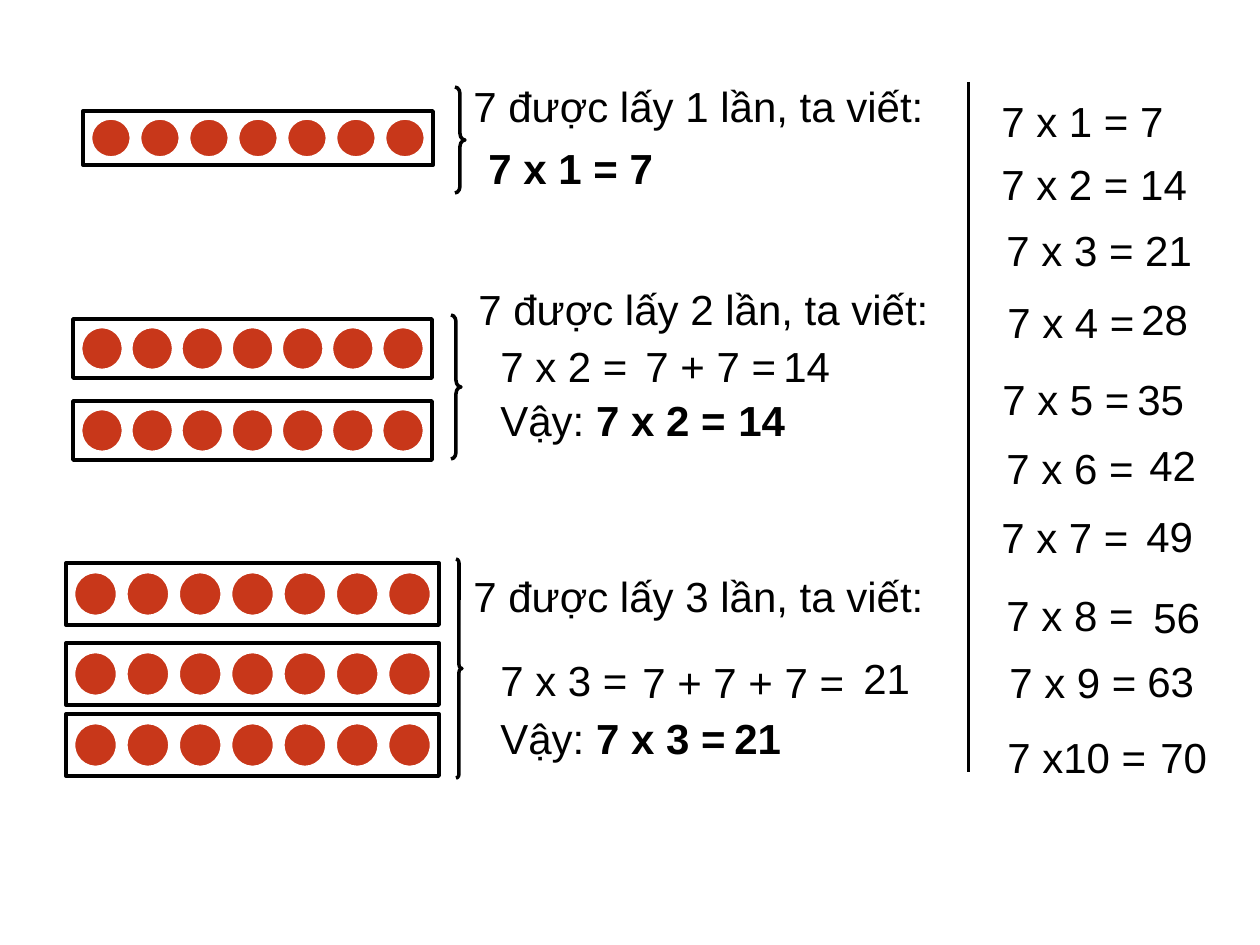
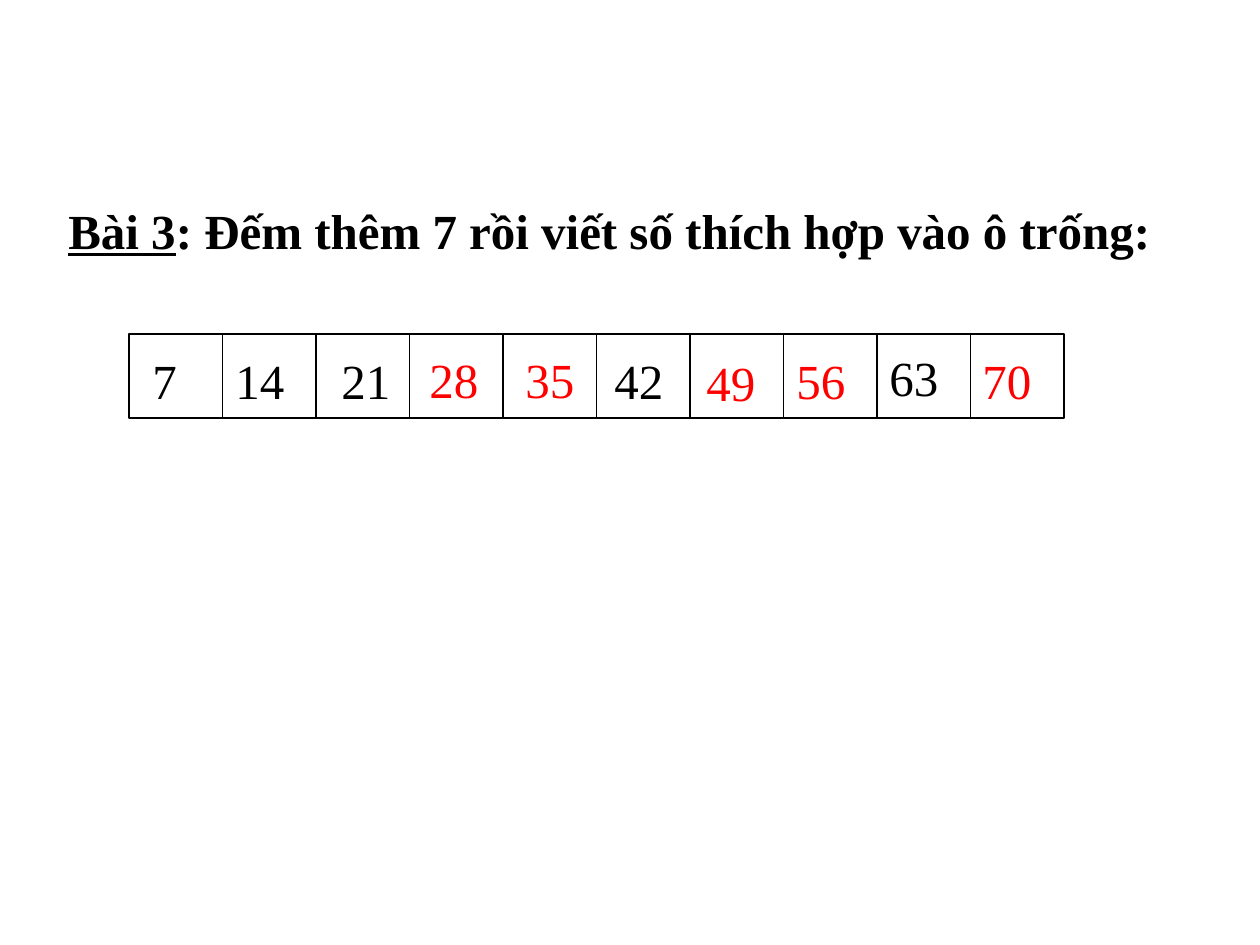
"""Build two slides on the multiplication table of seven."""
from dataclasses import dataclass

from lxml.etree import SubElement
from pptx import Presentation
from pptx.dml.color import RGBColor
from pptx.enum.shapes import MSO_CONNECTOR as Link, MSO_SHAPE as Shape
from pptx.oxml.ns import qn
from pptx.util import Emu, Pt


@dataclass(frozen=True)
class Theme:
    ink: str = "000000"
    paper: str = "FFFFFF"
    dot: str = "C8371A"
    answer: str = "FF0000"
    sans: str = "Arial"
    serif: str = "Times New Roman"
    sum_size: int = 24
    task_size: int = 28


THEME = Theme()
PX = 914400 / 126
SLIDE_SIZE = (1260, 945)
SUM_HEIGHT, TASK_HEIGHT = 63, 72
DOTS_PER_TRAY, TRAY_MARGIN = 7, 8

TRAY_GROUPS = [
    dict(left=83, tops=[111], size=(350, 54), dot=(40, 39), brace=(455, 87, 10, 106)),
    dict(left=73, tops=[319, 401], size=(359, 59), dot=(42, 43), brace=(451, 315, 10, 144)),
    dict(left=66, tops=[563, 643, 714], size=(373, 62), dot=(43, 44), brace=(456, 559, 6, 219)),
]
STATEMENTS = [
    ("7 được lấy 1 lần, ta viết:", 461, 74, 508),
    ("7 được lấy 2 lần, ta viết:", 466, 277, 508),
    ("7 được lấy 3 lần, ta viết:", 461, 564, 485),
]
WORKINGS = [
    ([("7 x 1 = 7", True)], 476, 136, 192),
    ([("7 x 2 =", False)], 488, 334, 154),
    ([("7 + 7 =", False)], 633, 334, 158),
    ([("14", False)], 771, 334, 73),
    ([("Vậy: ", False), ("7 x 2 =", True)], 488, 388, 251),
    ([("14", True)], 726, 388, 73),
    ([("7 x 3 =", False)], 488, 648, 154),
    ([("7 + 7 + 7 =", False)], 630, 650, 229),
    ([("21", False)], 851, 646, 73),
    ([("Vậy: ", False), ("7 x 3 =", True)], 488, 706, 253),
    ([("21", True)], 722, 706, 73),
]
TIMES_TABLE = [
    ("7 x 1 = 7", 989, 89, 189),
    ("7 x 2 = 14", 989, 152, 213),
    ("7 x 3 = 21", 994, 218, 213),
    ("7 x 4 =", 995, 290, 154), ("28", 1129, 287, 73),
    ("7 x 5 =", 990, 367, 154), ("35", 1125, 367, 73),
    ("7 x 6 =", 994, 436, 154), ("42", 1137, 433, 73),
    ("7 x 7 =", 989, 505, 154), ("49", 1134, 504, 73),
    ("7 x 8 =", 994, 583, 154), ("56", 1141, 585, 73),
    ("7 x 9 =", 997, 650, 154), ("63", 1135, 649, 73),
    ("7 x10 =", 995, 725, 166), ("70", 1148, 725, 73),
]
DIVIDER = (969, 82, 969, 772)

TASK = [("Bài 3", True), (": Đếm thêm 7 rồi viết số thích hợp vào ô trống:", False)]
COUNT_STRIP = dict(left=129, top=334, width=935, height=84)
COUNTS = [
    ("7", 140, 344, THEME.ink), ("14", 223, 344, THEME.ink),
    ("21", 329, 344, THEME.ink), ("28", 417, 343, THEME.answer),
    ("35", 513, 343, THEME.answer), ("42", 602, 344, THEME.ink),
    ("49", 694, 346, THEME.answer), ("56", 784, 344, THEME.answer),
    ("63", 877, 341, THEME.ink), ("70", 970, 344, THEME.answer),
]


def px(*lengths):
    return [Emu(round(length * PX)) for length in lengths]


def rgb(colour):
    return RGBColor.from_string(colour)


def write(slide, runs, box, font=THEME.sans, size=THEME.sum_size, colour=THEME.ink,
          wrap=False, underline_first=False):
    frame = slide.shapes.add_textbox(*px(*box)).text_frame
    frame.word_wrap = wrap
    paragraph = frame.paragraphs[0]
    for index, (text, bold) in enumerate(runs):
        run = paragraph.add_run()
        run.text = text
        run.font.name, run.font.size, run.font.bold = font, Pt(size), bold
        run.font.color.rgb = rgb(colour)
        if underline_first and index == 0:
            run.font.underline = True


def draw(shapes, kind, box, line=THEME.ink, weight=1, fill=None):
    part = shapes.add_shape(kind, *px(*box))
    part.shadow.inherit = False
    part.line.color.rgb, part.line.width = rgb(line), Pt(weight)
    if fill:
        part.fill.solid()
        part.fill.fore_color.rgb = rgb(fill)
    else:
        part.fill.background()
    return part


def draw_trays(slide, left, tops, size, dot, brace):
    trays = slide.shapes.add_group_shape().shapes
    (width, height), (dot_width, dot_height) = size, dot
    pitch = (width - 2 * TRAY_MARGIN - dot_width) / (DOTS_PER_TRAY - 1)
    for top in tops:
        draw(trays, Shape.RECTANGLE, (left, top, *size), weight=2.25, fill=THEME.paper)
        for column in range(DOTS_PER_TRAY):
            spot = (left + TRAY_MARGIN + column * pitch, top + (height - dot_height) / 2)
            draw(trays, Shape.OVAL, (*spot, *dot), line=THEME.paper, weight=1.5, fill=THEME.dot)
    draw(slide.shapes, Shape.RIGHT_BRACE, brace, weight=2).adjustments[0] = 0.66


def build_times_table(slide):
    for group in TRAY_GROUPS:
        draw_trays(slide, **group)
    for text, left, top, width in STATEMENTS:
        write(slide, [(text, False)], (left, top, width, SUM_HEIGHT), wrap=True)
    for runs, left, top, width in WORKINGS:
        write(slide, runs, (left, top, width, SUM_HEIGHT))
    for text, left, top, width in TIMES_TABLE:
        write(slide, [(text, False)], (left, top, width, SUM_HEIGHT))
    divider = slide.shapes.add_connector(Link.STRAIGHT, *px(*DIVIDER))
    divider.line.color.rgb, divider.line.width = rgb(THEME.ink), Pt(1.75)
    SubElement(divider._element.spPr, qn("a:effectLst"))


def build_counting(slide):
    task_style = dict(font=THEME.serif, size=THEME.task_size, wrap=True)
    write(slide, [(text, True) for text, _ in TASK], (56, 194, 1131, TASK_HEIGHT),
          underline_first=True, **task_style)
    cell_width = COUNT_STRIP["width"] / len(COUNTS)
    for index, (number, left, top, colour) in enumerate(COUNTS):
        cell = (COUNT_STRIP["left"] + index * cell_width, COUNT_STRIP["top"],
                cell_width, COUNT_STRIP["height"])
        draw(slide.shapes, Shape.RECTANGLE, cell)
        write(slide, [(number, False)], (left, top, 84, TASK_HEIGHT), colour=colour, **task_style)


def main():
    deck = Presentation()
    deck.slide_width, deck.slide_height = px(*SLIDE_SIZE)
    for build in (build_times_table, build_counting):
        build(deck.slides.add_slide(deck.slide_layouts[6]))
    deck.save("out.pptx")


if __name__ == "__main__":
    main()
